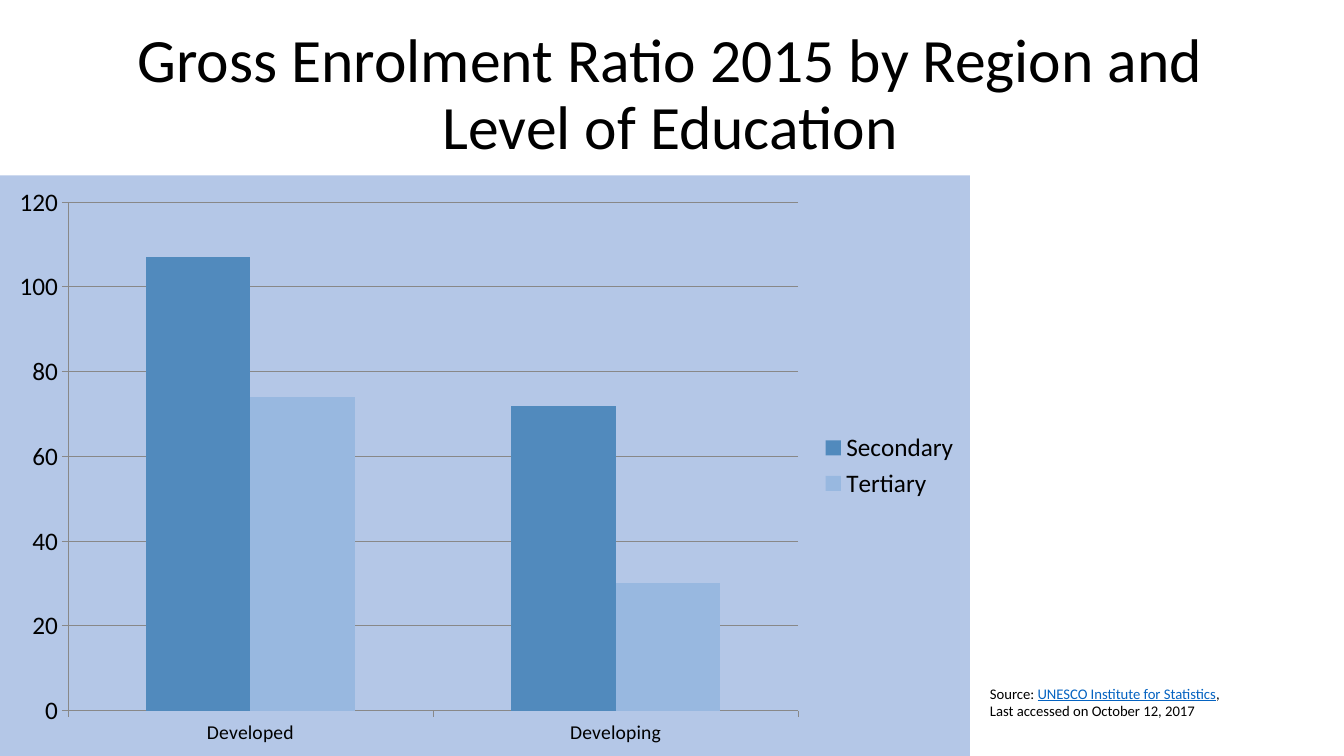
from dataclasses import dataclass

from lxml import etree
from pptx import Presentation
from pptx import oxml
from pptx.chart import data
from pptx.dml import color
from pptx.enum import chart as ch, text
from pptx.util import Inches, Pt


@dataclass(frozen=True)
class Theme:
    """Colours, font and type sizes of the slide."""
    font: str = "Calibri"
    ink: str = "000000"
    link: str = "0563C1"
    grid: str = "888888"
    panel: str = "B4C7E7"
    bars: tuple = ("518ABD", "98B8E0")
    title: float = 44
    label: float = 18
    group: float = 14
    note: float = 10.5


LOOK = Theme()
NS = ('xmlns:c="http://schemas.openxmlformats.org/drawingml/2006/chart" '
      'xmlns:a="http://schemas.openxmlformats.org/drawingml/2006/main"')


def rgb(tone):
    """Turn a hex string into a colour."""
    return color.RGBColor.from_string(tone)


def style(font, size, tone=LOOK.ink):
    """Set face, size and colour of a font."""
    font.name, font.size = LOOK.font, Pt(size)
    font.color.rgb = rgb(tone)


def trace(line):
    """Give a chart line the thin grid look."""
    line.color.rgb = rgb(LOOK.grid)
    line.width = Pt(0.5)


def frame(slide, box):
    """Add a wrapping text box and return its text frame."""
    body = slide.shapes.add_textbox(*map(Inches, box)).text_frame
    body.word_wrap = True
    return body


def write(para, words, size, tone=LOOK.ink):
    """Add one styled run to a paragraph."""
    run = para.add_run()
    run.text = words
    style(run.font, size, tone)
    return run


def heading(slide, box):
    """Place the centred title."""
    body = frame(slide, box)
    body.vertical_anchor = text.MSO_ANCHOR.MIDDLE
    para = body.paragraphs[0]
    para.alignment = text.PP_ALIGN.CENTER
    para.line_spacing = 0.9
    write(para, "Gross Enrolment Ratio 2015 by Region and Level of Education",
          LOOK.title)


def source(slide, box):
    """Place the source note."""
    para = frame(slide, box).paragraphs[0]
    write(para, "Source: ", LOOK.note)
    name = write(para, "UNESCO Institute for Statistics", LOOK.note, LOOK.link)
    name.font.underline = True
    write(para, ", Last accessed on October 12, 2017", LOOK.note)


def backdrop(chart):
    """Fill the chart area and fix the inner plot area."""
    root = chart.element
    panel = oxml.parse_xml(
        f'<c:spPr {NS}><a:solidFill><a:srgbClr val="{LOOK.panel}"/></a:solidFill>'
        '<a:ln><a:noFill/></a:ln></c:spPr>')
    root.find("{*}chart").addnext(panel)
    plot = root.find(".//{*}plotArea")
    for old in plot.findall("{*}layout"):
        plot.remove(old)
    layout = oxml.parse_xml(f"<c:layout {NS}><c:manualLayout/></c:layout>")
    rules = {"layoutTarget": "inner", "xMode": "edge", "yMode": "edge",
             "x": 0.07, "y": 0.046, "w": 0.753, "h": 0.876}
    for key, val in rules.items():
        tag = etree.QName(layout, key)
        etree.SubElement(layout[0], tag).set("val", str(val))
    plot.insert(0, layout)


def ratios(slide, box):
    """Place the column chart of enrolment ratios."""
    facts = data.CategoryChartData(number_format="0")
    facts.categories = ["Developed", "Developing"]
    facts.add_series("Secondary", (107, 72))
    facts.add_series("Tertiary", (74, 30))
    chart = slide.shapes.add_chart(
        ch.XL_CHART_TYPE.COLUMN_CLUSTERED, *map(Inches, box), facts).chart
    style(chart.font, LOOK.label)
    chart.has_title = False
    chart.has_legend = True
    chart.legend.position = ch.XL_LEGEND_POSITION.RIGHT
    chart.legend.include_in_layout = False
    style(chart.legend.font, LOOK.label)

    plot = chart.plots[0]
    plot.gap_width, plot.overlap = 150, 0
    plot.vary_by_categories = False
    for series, tone in zip(plot.series, LOOK.bars):
        series.format.fill.solid()
        series.format.fill.fore_color.rgb = rgb(tone)

    sizes = ((chart.category_axis, LOOK.group), (chart.value_axis, LOOK.label))
    for axis, size in sizes:
        style(axis.tick_labels.font, size)
        axis.major_tick_mark = ch.XL_TICK_MARK.OUTSIDE
        trace(axis.format.line)
    scale = chart.value_axis
    scale.minimum_scale, scale.maximum_scale, scale.major_unit = 0, 120, 20
    scale.has_major_gridlines = True
    trace(scale.major_gridlines.format.line)
    backdrop(chart)


def main():
    """Build and save the slide."""
    deck = Presentation()
    deck.slide_width, deck.slide_height = Inches(13.33), Inches(7.5)
    slide = deck.slides.add_slide(deck.slide_layouts[6])
    ratios(slide, (0, 1.74, 9.62, 5.76))
    heading(slide, (0.9, 0.23, 11.5, 1.45))
    source(slide, (9.72, 6.74, 2.68, 0.47))
    deck.save("out.pptx")


if __name__ == "__main__":
    main()
